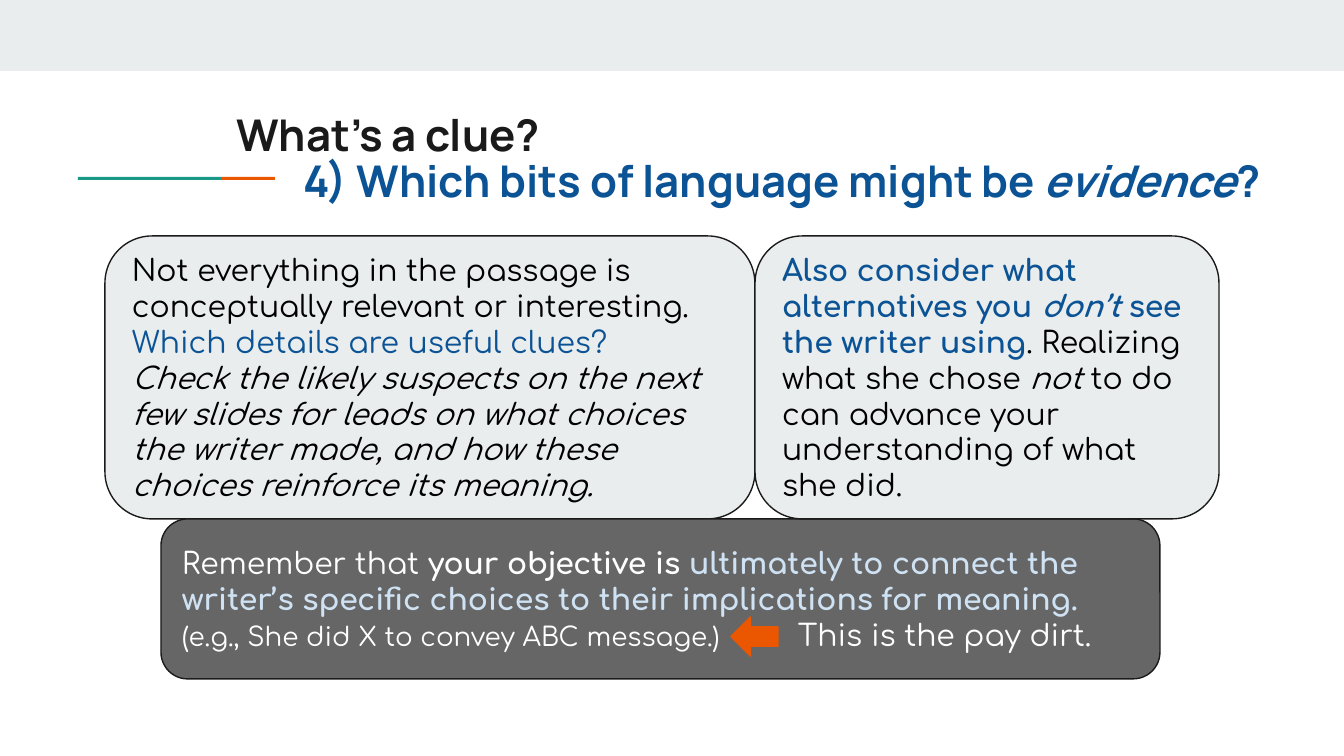
from lxml import etree
from pptx import Presentation
from pptx.dml.color import RGBColor
from pptx.enum import shapes, text
from pptx.oxml.ns import qn
from pptx.util import Pt

PX = 914400 / 134.4
INSET = 13.44
C = {"pale": "E9EDEE", "teal": "1A9988", "orange": "EB5600", "ink": "1A1A1A",
     "blue": "0B5394", "black": "000000", "gray": "666666", "white": "FFFFFF",
     "sky": "CFE2F3"}

prs = Presentation()
prs.slide_width, prs.slide_height = round(1344 * PX), round(756 * PX)
slide = prs.slides.add_slide(prs.slide_layouts[6])
S = shapes.MSO_SHAPE


def add_shape(kind, box, fill, line=None):
    sp = slide.shapes.add_shape(kind, *[round(v * PX) for v in box])
    sp.shadow.inherit = False
    sp.fill.solid()
    sp.fill.fore_color.rgb = RGBColor.from_string(C[fill])
    if line:
        sp.line.color.rgb = RGBColor.from_string(C[line])
        sp.line.width = Pt(0.75)
    else:
        sp.line.fill.background()
    return sp


def add_run(p, words, color="black", size=16, font="Comfortaa", bold=False, italic=False):
    r = p.add_run()
    r.text = words
    r.font.name, r.font.size = font, Pt(size)
    r.font.bold, r.font.italic = bold, italic
    r.font.color.rgb = RGBColor.from_string(C[color])


for box, fill in [((0, 0, 1344, 71), "pale"),
                  ((78, 177, 143, 3), "teal"),
                  ((221, 177, 54, 3), "orange")]:
    add_shape(S.RECTANGLE, box, fill)

title = {"font": "Manrope", "size": 23.4, "bold": True}
tf = slide.shapes.add_textbox(*[round(v * PX) for v in (223, 102, 1053, 125)]).text_frame
tf.word_wrap = True
tf.margin_left = tf.margin_right = tf.margin_top = tf.margin_bottom = round(INSET * PX)
p = tf.paragraphs[0]
p.line_spacing = 0.87
add_run(p, "What’s a clue?", color="ink", **title)
p = tf.add_paragraph()
p.line_spacing = 0.87
p._p.get_or_add_pPr().set("indent", str(round(67 * PX)))
add_run(p, "4) Which bits of language might be ", color="blue", **title)
add_run(p, "evidence", color="blue", italic=True, **title)
add_run(p, "?", color="blue", **title)

cards = [
    ((105, 236, 650, 283), "pale", [
        [("Not everything in the passage is conceptually relevant or interesting. ", {}),
         ("Which details are useful clues?", {"color": "blue"})],
        [("Check the likely suspects on the next few slides for leads on what choices "
          "the writer made, and how these choices reinforce its meaning.", {"italic": True})]]),
    ((161, 519, 999, 160), "gray", [
        [("Remember that ", {"color": "white"}),
         ("your objective is ", {"color": "white", "bold": True}),
         ("ultimately to connect the writer’s specific choices to their implications "
          "for meaning. ", {"color": "sky", "bold": True}),
         ("(e.g., She did X to convey ABC message.)\t", {"color": "white", "size": 14}),
         ("This is the pay dirt.", {"color": "white"})]]),
    ((755, 236, 464, 283), "pale", [
        [("Also consider what alternatives you ", {"color": "blue", "bold": True}),
         ("don’t ", {"color": "blue", "bold": True, "italic": True}),
         ("see the writer using", {"color": "blue", "bold": True}),
         (". Realizing what she chose ", {}),
         ("not ", {"italic": True}),
         ("to do can advance your understanding of what she did.", {})]]),
]
for box, fill, paragraphs in cards:
    sp = add_shape(S.ROUNDED_RECTANGLE, box, fill, "ink")
    tf = sp.text_frame
    tf.word_wrap = True
    tf.vertical_anchor = text.MSO_ANCHOR.MIDDLE
    tf.margin_left = tf.margin_right = tf.margin_top = tf.margin_bottom = round(INSET * PX)
    for i, runs in enumerate(paragraphs):
        p = tf.add_paragraph() if i else tf.paragraphs[0]
        p.alignment = text.PP_ALIGN.LEFT
        if fill == "gray":
            tabs = etree.SubElement(p._p.get_or_add_pPr(), qn("a:tabLst"))
            etree.SubElement(tabs, qn("a:tab"), pos=str(round(616 * PX)), algn="l")
        for words, style in runs:
            add_run(p, words, **style)

add_shape(S.LEFT_ARROW, (731, 617, 47, 39), "orange", "orange")

prs.save("out.pptx")
